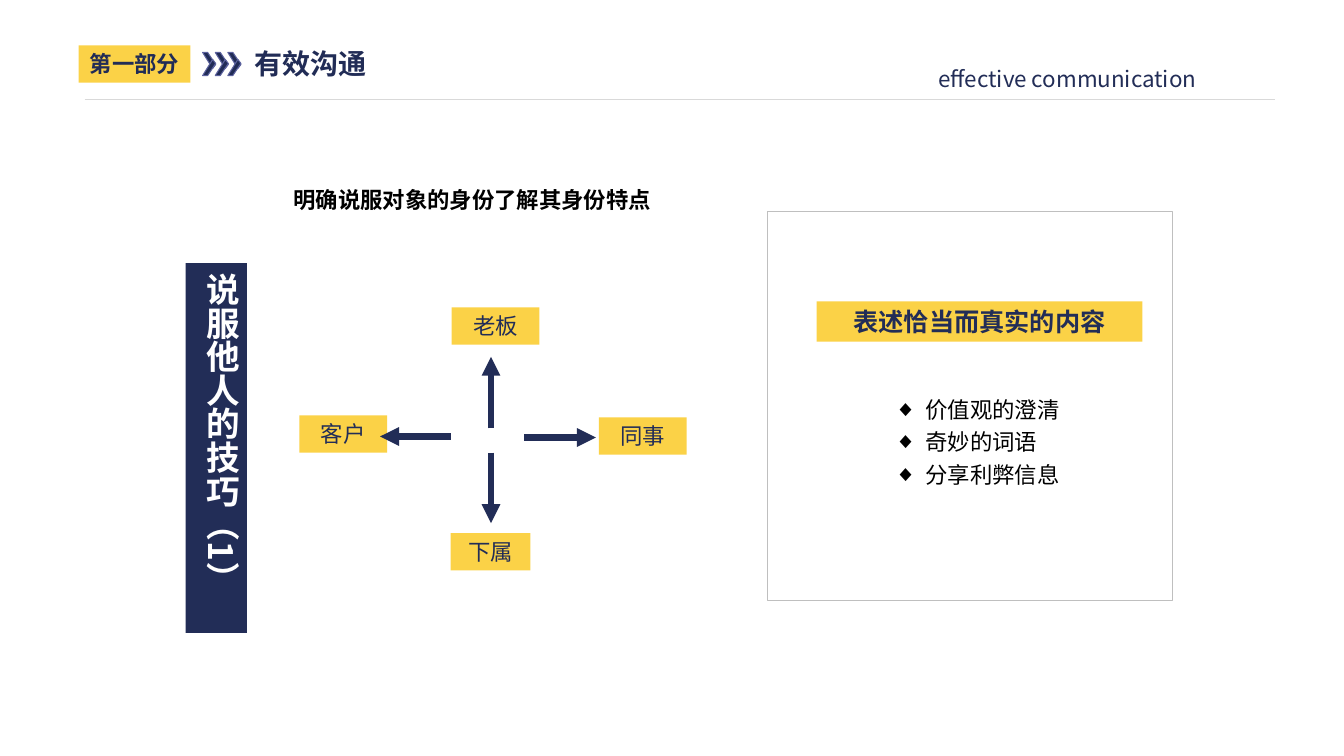
"""Build the slide on persuading other people."""
from dataclasses import dataclass
from typing import Any

import pptx
import pptx.dml.color
import pptx.enum.shapes
import pptx.enum.text
import pptx.oxml.ns
import pptx.util

Inches = pptx.util.Inches
Pt = pptx.util.Pt
qn = pptx.oxml.ns.qn
ALIGN = pptx.enum.text.PP_ALIGN


@dataclass(frozen=True)
class Theme:
    """Colours, typeface and type sizes."""
    face: str = "Noto Sans CJK SC"
    navy: str = "222D57"
    header_navy: str = "212C56"
    yellow: str = "FBD247"
    black: str = "000000"
    white: str = "FFFFFF"
    frame: str = "BFBFBF"
    rule: str = "D9D9D9"
    chevron_edge: str = "5C629E"
    body: int = 16
    callout: int = 18
    title: int = 20
    banner: int = 24


THEME = Theme()


@dataclass(frozen=True)
class Place:
    """Position and size in inches."""
    left: float
    top: float
    width: float
    height: float

    def lengths(self) -> tuple[int, ...]:
        """Return the four lengths for a shape call."""
        return tuple(Inches(v) for v in (self.left, self.top, self.width, self.height))


@dataclass(frozen=True)
class Style:
    """Formatting of a block of text."""
    size: int = THEME.body
    colour: str = THEME.navy
    bold: bool = False
    align: Any = ALIGN.CENTER
    bullet: str = ""
    before: float = 0


@dataclass(frozen=True)
class Label:
    """A filled rectangle holding text."""
    text: str
    place: Place
    style: Style = Style()
    fill: str = THEME.yellow
    vertical: bool = False


@dataclass(frozen=True)
class Stroke:
    """A straight line, with or without an arrowhead."""
    start: tuple[float, float]
    end: tuple[float, float]
    colour: str = THEME.navy
    width: float = 4.5
    arrow: bool = True


LABELS = (
    Label("说服他人的技巧（1）", Place(1.84, 2.61, 0.61, 3.67),
          Style(THEME.banner, THEME.white, True), THEME.navy, True),
    Label("同事", Place(5.94, 4.14, 0.87, 0.37)),
    Label("下属", Place(4.47, 5.29, 0.79, 0.37)),
    Label("客户", Place(2.97, 4.12, 0.87, 0.37)),
    Label("老板", Place(4.48, 3.05, 0.87, 0.37)),
    Label("表述恰当而真实的内容", Place(8.1, 2.99, 3.23, 0.4),
          Style(THEME.callout, bold=True)),
    Label("第一部分", Place(0.78, 0.45, 1.11, 0.37),
          Style(colour=THEME.header_navy, bold=True)),
)
STROKES = (
    Stroke((4.87, 4.25), (4.87, 3.54)),
    Stroke((4.87, 4.49), (4.87, 5.19)),
    Stroke((5.2, 4.34), (5.91, 4.34)),
    Stroke((4.47, 4.33), (3.77, 4.33)),
    Stroke((0.84, 0.99), (12.65, 0.99), THEME.rule, 0.5, False),
)
POINTS = ("价值观的澄清", "奇妙的词语", "分享利弊信息")
CHEVRON_HALF = ((0, 0), (0.1, 0.16), (0.13, 0.12), (0.05, 0))


def rgb(value: str) -> pptx.dml.color.RGBColor:
    """Turn a hex string into a colour."""
    return pptx.dml.color.RGBColor.from_string(value)


def write(frame: Any, lines: tuple[str, ...], style: Style) -> None:
    """Fill a text frame with formatted paragraphs."""
    frame.word_wrap = True
    frame.auto_size = pptx.enum.text.MSO_AUTO_SIZE.NONE
    frame.vertical_anchor = pptx.enum.text.MSO_ANCHOR.TOP
    frame.text = "\n".join(lines)
    for para in frame.paragraphs:
        para.alignment = style.align
        para.space_before = Pt(style.before)
        font = para.font
        font.name, font.size, font.bold = THEME.face, Pt(style.size), style.bold
        font.color.rgb = rgb(style.colour)
        properties = para._p.get_or_add_pPr()
        defaults = properties.find(qn("a:defRPr"))
        east_asian = defaults.makeelement(qn("a:ea"), {"typeface": THEME.face})
        defaults.find(qn("a:latin")).addnext(east_asian)
        if style.bullet:
            indent = Inches(0.31)
            properties.set("marL", str(indent))
            properties.set("indent", str(-indent))
            bullet = defaults.makeelement(qn("a:buChar"), {"char": style.bullet})
            defaults.addprevious(bullet)


def add_label(page: Any, label: Label) -> None:
    """Draw a filled rectangle with its text."""
    box = page.shapes.add_shape(pptx.enum.shapes.MSO_SHAPE.RECTANGLE, *label.place.lengths())
    box.shadow.inherit = False
    box.fill.solid()
    box.fill.fore_color.rgb = rgb(label.fill)
    box.line.fill.background()
    write(box.text_frame, (label.text,), label.style)
    if label.vertical:
        box.text_frame._txBody.bodyPr.set("vert", "eaVert")


def add_stroke(page: Any, stroke: Stroke) -> None:
    """Draw a line or an arrow."""
    ends = (Inches(v) for v in stroke.start + stroke.end)
    line = page.shapes.add_connector(pptx.enum.shapes.MSO_CONNECTOR.STRAIGHT, *ends)
    line.line.color.rgb = rgb(stroke.colour)
    line.line.width = Pt(stroke.width)
    properties = line._element.spPr
    outline = properties.find(qn("a:ln"))
    if stroke.arrow:
        outline.append(outline.makeelement(qn("a:tailEnd"), {"type": "triangle"}))
    properties.append(properties.makeelement(qn("a:effectLst"), {}))


def add_chevron_half(page: Any, left: float, top: float, direction: int) -> None:
    """Draw one arm of a chevron, running down (1) or up (-1)."""
    points = [(Inches(left + x), Inches(top + direction * y)) for x, y in CHEVRON_HALF]
    builder = page.shapes.build_freeform(*points[0])
    builder.add_line_segments(points[1:], close=True)
    arm = builder.convert_to_shape()
    arm.shadow.inherit = False
    arm.fill.solid()
    arm.fill.fore_color.rgb = rgb(THEME.header_navy)
    arm.line.color.rgb = rgb(THEME.chevron_edge)
    arm.line.width = Pt(0.75)


def add_text(page: Any, text: str, place: Place, style: Style) -> Any:
    """Add a text box and return its paragraph."""
    box = page.shapes.add_textbox(*place.lengths())
    write(box.text_frame, (text,), style)
    return box.text_frame.paragraphs[0]


def fill_placeholder(holder: Any, lines: tuple[str, ...], place: Place, style: Style) -> None:
    """Move a placeholder and write its text."""
    holder.left, holder.top, holder.width, holder.height = place.lengths()
    write(holder.text_frame, lines, style)


def main() -> None:
    """Build and save the deck."""
    deck = pptx.Presentation()
    deck.slide_width, deck.slide_height = Inches(13.33), Inches(7.5)
    page = deck.slides.add_slide(deck.slide_layouts[1])
    fill_placeholder(page.shapes.title, ("有效沟通",), Place(2.42, 0.41, 1.78, 0.44),
                     Style(THEME.title, THEME.header_navy, True, ALIGN.JUSTIFY))
    fill_placeholder(page.placeholders[1], POINTS, Place(8.77, 3.88, 1.87, 1.18),
                     Style(colour=THEME.black, align=ALIGN.LEFT, bullet="◆", before=4))
    frame = page.shapes.add_shape(pptx.enum.shapes.MSO_SHAPE.RECTANGLE,
                                  *Place(7.61, 2.1, 4.02, 3.86).lengths())
    frame.shadow.inherit = False
    frame.fill.background()
    frame.line.color.rgb = rgb(THEME.frame)
    frame.line.width = Pt(0.75)
    for label in LABELS:
        add_label(page, label)
    for stroke in STROKES:
        add_stroke(page, stroke)
    for index in range(3):
        for top, direction in ((0.52, 1), (0.75, -1)):
            add_chevron_half(page, 2.01 + index * 0.125, top, direction)
    add_text(page, "明确说服对象的身份了解其身份特点", Place(2.25, 1.8, 4.87, 0.37),
             Style(colour=THEME.black, bold=True))
    subtitle = add_text(page, "effective communication", Place(8.71, 0.6, 3.76, 0.37),
                        Style(align=ALIGN.JUSTIFY))
    subtitle.level = 1
    subtitle._p.get_or_add_pPr().set("marL", str(Inches(0.5)))
    deck.save("out.pptx")


if __name__ == "__main__":
    main()
